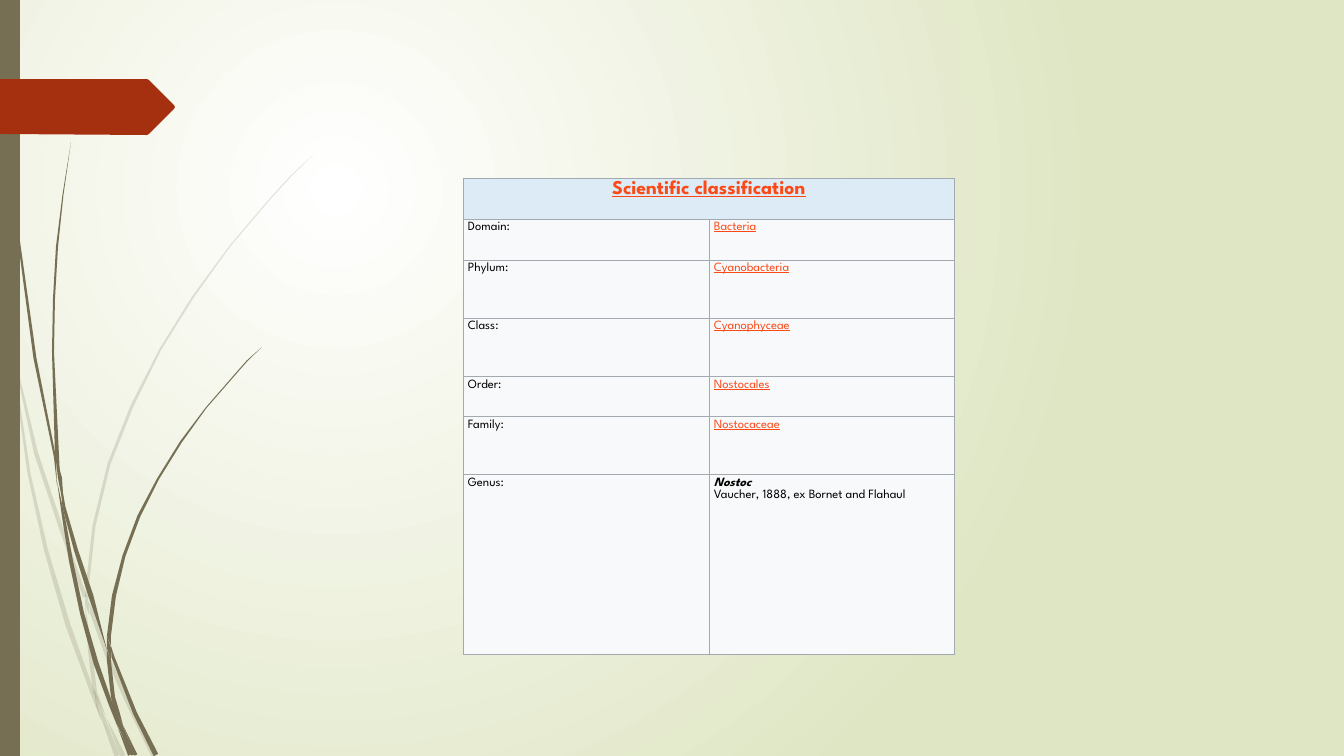
import math

import lxml.etree
import pptx
import pptx.dml.color
import pptx.enum.shapes
import pptx.enum.text
import pptx.oxml.ns
import pptx.util

SCALE = 914400 / 100.8
WIDTH, HEIGHT = 1344, 756
FONT = "League Spartan"
OLIVE, RUST, LINK, BLACK = "766F54", "A53010", "FB4A18", "000000"
HEADING_FILL, CELL_FILL, BORDER = "DCEBF5", "F8F9FA", "A2A9B1"

PALE_BLADES = [
    [(1, 293, 4), (9, 335, 3), (11, 353, 0)],
    [(14, 348, 0), (19, 378, 2), (36, 453, 4), (60, 525, 4), (85, 597, 4)],
    [(89, 602, 0), (92, 613, 4), (107, 655, 4), (126, 699, 4), (154, 756, 5)],
    [(106, 717, 0), (123, 756, 5)],
    [(11, 353, 0), (17, 390, 2), (29, 473, 3), (46, 550, 4), (68, 625, 5),
     (93, 694, 4), (101, 720, 0)],
    [(85, 604, 0), (90, 651, 4), (95, 692, 4), (106, 717, 0)],
    [(314, 154, 0), (291, 176, 1), (270, 199, 1), (230, 246, 1), (193, 297, 2),
     (160, 350, 2), (132, 406, 3), (109, 464, 3), (94, 526, 3), (87, 589, 3), (88, 600, 0)],
    [(102, 720, 0), (117, 756, 5)],
    [(85, 591, 0), (87, 603, 4), (89, 615, 0)],
    [(94, 688, 0), (98, 705, 4), (103, 718, 4), (120, 756, 0)],
]
DARK_BLADES = [
    [(4, 0, 1), (4, 48, 1), (8, 110, 1), (18, 234, 2), (35, 358, 3), (55, 457, 2),
     (57, 485, 0)],
    [(60, 476, 0), (64, 507, 3), (76, 550, 4), (91, 596, 5), (107, 650, 0)],
    [(111, 646, 0), (113, 657, 3), (135, 713, 4), (156, 755, 5)],
    [(57, 481, 0), (64, 520, 3), (71, 561, 4), (82, 613, 4), (96, 663, 5),
     (111, 705, 4), (118, 728, 0)],
    [(71, 142, 0), (63, 195, 1), (57, 247, 2), (54, 299, 2), (53, 352, 2),
     (57, 455, 4), (60, 476, 0)],
    [(123, 725, 0), (136, 755, 3)],
    [(55, 453, 0), (60, 478, 4), (64, 509, 0)],
    [(262, 347, 0), (247, 361, 1), (233, 377, 1), (206, 408, 1), (181, 442, 2),
     (158, 479, 2), (139, 516, 3), (124, 556, 3), (114, 596, 4), (109, 636, 4),
     (111, 646, 0)],
    [(118, 728, 0), (130, 755, 4)],
    [(107, 650, 0), (109, 661, 4), (113, 697, 4), (118, 712, 3), (123, 725, 0)],
    [(107, 636, 0), (109, 648, 4), (111, 661, 0)],
    [(111, 697, 0), (117, 717, 4), (120, 725, 5), (133, 755, 3)],
]
TAG_OUTLINE = [(0, 79), (147, 79), (149, 80), (174, 105), (175, 107), (174, 109),
               (149, 134), (147, 135), (0, 134)]
RANKS = [
    ("Domain:", "Bacteria"),
    ("Phylum:", "Cyanobacteria"),
    ("Class:", "Cyanophyceae"),
    ("Order:", "Nostocales"),
    ("Family:", "Nostocaceae"),
]
ROW_HEIGHTS = [41, 41, 58, 59, 40, 58, 180]


def px(n):
    return pptx.util.Emu(round(n * SCALE))


def rgb(value):
    return pptx.dml.color.RGBColor.from_string(value)


def add_xml(parent, tag, **attrs):
    return lxml.etree.SubElement(parent, pptx.oxml.ns.qn(tag), **attrs)


def paint(sp, color, alpha=None):
    sp.shadow.inherit = False
    sp.fill.solid()
    sp.fill.fore_color.rgb = rgb(color)
    sp.line.fill.background()
    if alpha:
        srgb = sp._element.spPr.find(".//" + pptx.oxml.ns.qn("a:srgbClr"))
        add_xml(srgb, "a:alpha", val=str(alpha * 1000))


def background(s):
    fill = s.background.fill
    fill.gradient()
    for stop, color in zip(fill.gradient_stops, ("FFFFFF", "DFE6C4")):
        stop.color.rgb = rgb(color)
    grad = s.element.find(".//" + pptx.oxml.ns.qn("a:gradFill"))
    grad.remove(grad.find(pptx.oxml.ns.qn("a:lin")))
    circle = add_xml(grad, "a:path", path="circle")
    add_xml(circle, "a:fillToRect", l="25000", t="25000", r="75000", b="75000")


def polygon(s, x, y, points, color, alpha=None):
    outline = [(px(x + dx), px(y + dy)) for dx, dy in points]
    builder = s.shapes.build_freeform(*outline[0])
    builder.add_line_segments(outline[1:])
    paint(builder.convert_to_shape(), color, alpha)


def blade(s, x, y, spine, alpha):
    left, right = [], []
    for i, (cx, cy, w) in enumerate(spine):
        x1, y1 = spine[max(i - 1, 0)][:2]
        x2, y2 = spine[min(i + 1, len(spine) - 1)][:2]
        length = math.hypot(x2 - x1, y2 - y1)
        nx, ny = (y2 - y1) / length * w / 2, (x1 - x2) / length * w / 2
        left.append((cx - nx, cy - ny))
        if w:
            right.append((cx + nx, cy + ny))
    polygon(s, x, y, left + right[::-1], OLIVE, alpha)


def grass(s, x, y):
    for spine in PALE_BLADES:
        blade(s, x, y, spine, 20)
    for spine in DARK_BLADES:
        blade(s, x, y, spine, None)


def side_bar(s, x, y, w, h):
    kind = pptx.enum.shapes.MSO_SHAPE.RECTANGLE
    paint(s.shapes.add_shape(kind, px(x), px(y), px(w), px(h)), OLIVE)
    polygon(s, x, y, TAG_OUTLINE, RUST)


def add_run(p, text, color=BLACK, size=9, bold=False, italic=False, underline=False):
    r = p.add_run()
    r.text = text
    r.font.name = FONT
    r.font.size = pptx.util.Pt(size)
    r.font.bold, r.font.italic, r.font.underline = bold, italic, underline
    r.font.color.rgb = rgb(color)


def style_cell(cell, fill):
    cell.margin_left = cell.margin_right = px(5)
    cell.margin_top = cell.margin_bottom = px(3)
    tcPr = cell._tc.get_or_add_tcPr()
    for side in ("a:lnL", "a:lnR", "a:lnT", "a:lnB"):
        ln = add_xml(tcPr, side, w=str(pptx.util.Pt(0.75)))
        add_xml(add_xml(ln, "a:solidFill"), "a:srgbClr", val=BORDER)
    cell.fill.solid()
    cell.fill.fore_color.rgb = rgb(fill)


def classification(s, x, y, w):
    rows = len(ROW_HEIGHTS)
    frame = s.shapes.add_table(rows, 2, px(x), px(y), px(w), px(sum(ROW_HEIGHTS)))
    table = frame.table
    for column in table.columns:
        column.width = px(w / 2)
    for i, height in enumerate(ROW_HEIGHTS):
        table.rows[i].height = px(height)
        for cell in table.rows[i].cells:
            style_cell(cell, CELL_FILL if i else HEADING_FILL)

    heading = table.cell(0, 0)
    heading.merge(table.cell(0, 1))
    p = heading.text_frame.paragraphs[0]
    p.alignment = pptx.enum.text.PP_ALIGN.CENTER
    add_run(p, "Scientific classification", LINK, 14, bold=True, underline=True)

    for i, (rank, taxon) in enumerate(RANKS, 1):
        add_run(table.cell(i, 0).text_frame.paragraphs[0], rank)
        add_run(table.cell(i, 1).text_frame.paragraphs[0], taxon, LINK, underline=True)

    add_run(table.cell(rows - 1, 0).text_frame.paragraphs[0], "Genus:")
    p = table.cell(rows - 1, 1).text_frame.paragraphs[0]
    add_run(p, "Nostoc", bold=True, italic=True)
    p.add_line_break()
    add_run(p, "Vaucher, 1888, ex Bornet and Flahaul")


def main():
    prs = pptx.Presentation()
    prs.slide_width, prs.slide_height = px(WIDTH), px(HEIGHT)
    s = prs.slides.add_slide(prs.slide_layouts[6])
    background(s)
    grass(s, 0, 0)
    side_bar(s, 0, 0, 20, HEIGHT)
    classification(s, 463, 178, 492)
    prs.save("out.pptx")


if __name__ == "__main__":
    main()
